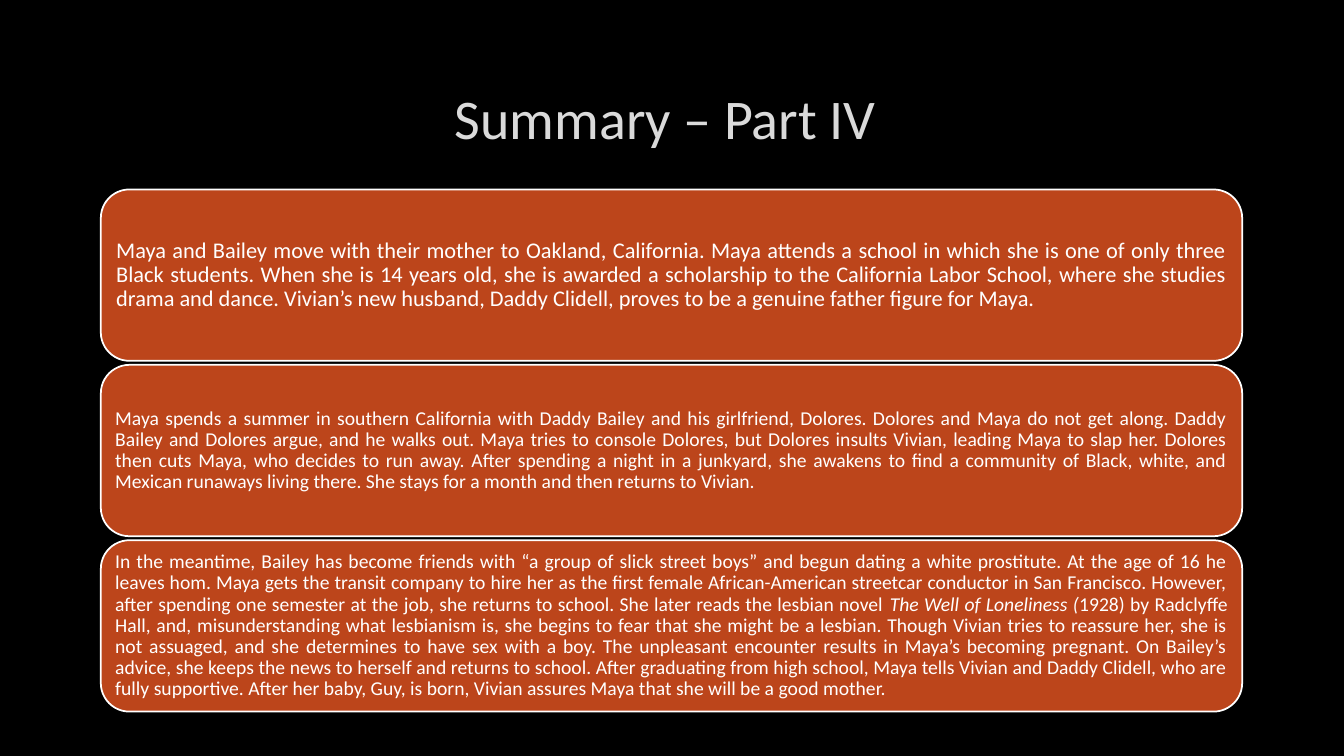
from dataclasses import dataclass

from pptx import Presentation
from pptx.dml.color import RGBColor
from pptx.enum.shapes import MSO_SHAPE
from pptx.enum.text import MSO_ANCHOR, PP_ALIGN
from pptx.util import Inches, Pt


@dataclass(frozen=True)
class Theme:
    font: str = "Calibri"
    background: str = "000000"
    heading: str = "DADADA"
    panel: str = "BC451B"
    panel_text: str = "FFFFFF"
    panel_line: str = "FFFFFF"
    line_width: float = 1.25
    heading_size: int = 40
    lead_size: int = 16
    body_size: int = 14


THEME = Theme()

# Layout in inches
LEFT, WIDTH = 1, 11.32
PANEL_TOP, PANEL_HEIGHT, PANEL_GAP = 1.88, 1.7, 0.04

# Each panel: text size, inset, and parts of text with an italic flag
PANELS = [
    (THEME.lead_size, 0.07, [
        ("Maya and Bailey move with their mother to Oakland, California. Maya attends a "
         "school in which she is one of only three Black students. When she is 14 years "
         "old, she is awarded a scholarship to the California Labor School, where she "
         "studies drama and dance. Vivian’s new husband, Daddy Clidell, proves to be a "
         "genuine father figure for Maya.", False),
    ]),
    (THEME.body_size, 0.06, [
        ("Maya spends a summer in southern California with Daddy Bailey and his "
         "girlfriend, Dolores. Dolores and Maya do not get along. Daddy Bailey and "
         "Dolores argue, and he walks out. Maya tries to console Dolores, but Dolores "
         "insults Vivian, leading Maya to slap her. Dolores then cuts Maya, who decides "
         "to run away. After spending a night in a junkyard, she awakens to find a "
         "community of Black, white, and Mexican runaways living there. She stays for a "
         "month and then returns to Vivian.", False),
    ]),
    (THEME.body_size, 0.06, [
        ("In the meantime, Bailey has become friends with “a group of slick street boys” "
         "and begun dating a white prostitute. At the age of 16 he leaves hom. Maya gets "
         "the transit company to hire her as the first female African-American streetcar "
         "conductor in San Francisco. However, after spending one semester at the job, "
         "she returns to school. She later reads the lesbian novel ", False),
        ("The Well of Loneliness (", True),
        ("1928) by Radclyffe Hall, and, misunderstanding what lesbianism is, she begins "
         "to fear that she might be a lesbian. Though Vivian tries to reassure her, she "
         "is not assuaged, and she determines to have sex with a boy. The unpleasant "
         "encounter results in Maya’s becoming pregnant. On Bailey’s advice, she keeps "
         "the news to herself and returns to school. After graduating from high school, "
         "Maya tells Vivian and Daddy Clidell, who are fully supportive. After her baby, "
         "Guy, is born, Vivian assures Maya that she will be a good mother.", False),
    ]),
]


class SlideBuilder:
    def __init__(self, slide, theme):
        self.slide = slide
        self.theme = theme
        backdrop = slide.background.fill
        backdrop.solid()
        backdrop.fore_color.rgb = RGBColor.from_string(theme.background)

    def set_text(self, frame, parts, size, color, align):
        frame.word_wrap = True
        frame.vertical_anchor = MSO_ANCHOR.MIDDLE
        paragraph = frame.paragraphs[0]
        paragraph.alignment = align
        paragraph.line_spacing = 0.9
        for text, italic in parts:
            run = paragraph.add_run()
            run.text = text
            run.font.name = self.theme.font
            run.font.size = Pt(size)
            run.font.italic = italic
            run.font.color.rgb = RGBColor.from_string(color)

    def heading(self, text, left, top, width, height):
        box = self.slide.shapes.add_textbox(
            Inches(left), Inches(top), Inches(width), Inches(height))
        self.set_text(box.text_frame, [(text, False)], self.theme.heading_size,
                      self.theme.heading, PP_ALIGN.CENTER)

    def panel(self, parts, size, inset, left, top, width, height):
        card = self.slide.shapes.add_shape(
            MSO_SHAPE.ROUNDED_RECTANGLE,
            Inches(left), Inches(top), Inches(width), Inches(height))
        card.shadow.inherit = False
        card.fill.solid()
        card.fill.fore_color.rgb = RGBColor.from_string(self.theme.panel)
        card.line.color.rgb = RGBColor.from_string(self.theme.panel_line)
        card.line.width = Pt(self.theme.line_width)
        frame = card.text_frame
        frame.margin_left = frame.margin_right = Inches(inset)
        frame.margin_top = frame.margin_bottom = Inches(inset)
        self.set_text(frame, parts, size, self.theme.panel_text, PP_ALIGN.JUSTIFY)


def main():
    deck = Presentation()
    deck.slide_width, deck.slide_height = Inches(13.33), Inches(7.5)
    builder = SlideBuilder(deck.slides.add_slide(deck.slide_layouts[6]), THEME)

    # Title
    builder.heading("Summary – Part IV ", LEFT, 0.67, WIDTH, 1.06)

    # Stacked summary panels
    for row, (size, inset, parts) in enumerate(PANELS):
        top = PANEL_TOP + row * (PANEL_HEIGHT + PANEL_GAP)
        builder.panel(parts, size, inset, LEFT, top, WIDTH, PANEL_HEIGHT)

    deck.save("out.pptx")


if __name__ == "__main__":
    main()
